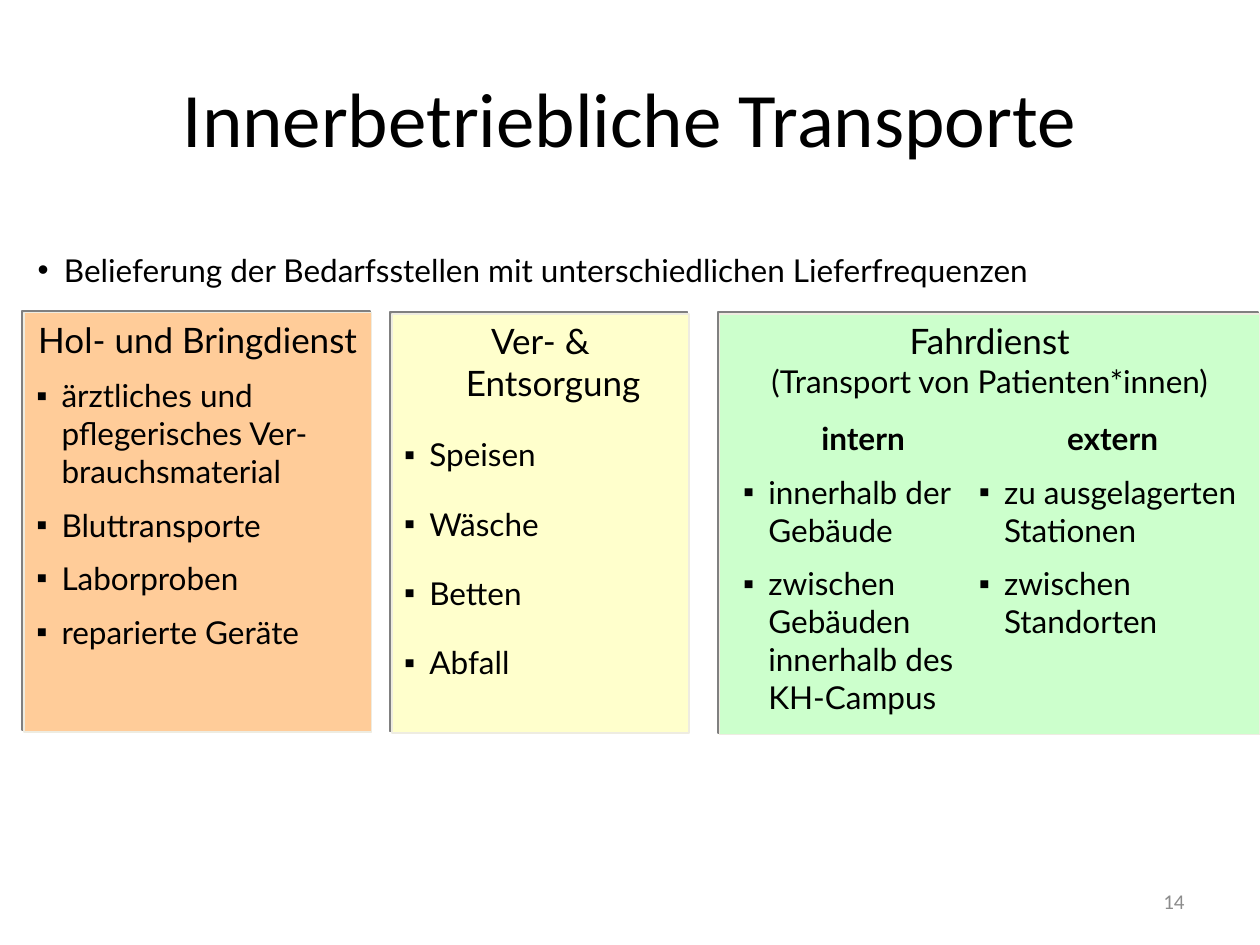
from lxml import etree
from pptx import Presentation
from pptx.dml.color import RGBColor
from pptx.enum.shapes import MSO_SHAPE
from pptx.enum.text import MSO_ANCHOR, PP_ALIGN
from pptx.oxml import parse_xml
from pptx.oxml.ns import qn
from pptx.util import Inches, Pt

SHADOW = (
    '<a:effectLst xmlns:a="http://schemas.openxmlformats.org/drawingml/2006/main">'
    '<a:outerShdw dist="17780" dir="13500000" algn="ctr" rotWithShape="0">'
    '<a:srgbClr val="808080"/></a:outerShdw></a:effectLst>'
)


def color(hex_code):
    return RGBColor.from_string(hex_code)


def write(p, text, size, align=PP_ALIGN.LEFT, indent=0, before=0, bullet=None,
          bold=False, font="Lato", ink="000000"):
    p.text = text
    p.alignment = align
    p.space_before = Pt(before)
    for r in p.runs:
        r.font.size = Pt(size)
        r.font.bold = bold
        r.font.name = font
        r.font.color.rgb = color(ink)
    pPr = p._p.get_or_add_pPr()
    pPr.set("marL", str(Inches(indent)))
    pPr.set("indent", str(-Inches(indent)))
    if bullet:
        etree.SubElement(pPr, qn("a:buFont")).set("typeface", "Arial")
        etree.SubElement(pPr, qn("a:buChar")).set("char", bullet)


prs = Presentation()
prs.slide_width, prs.slide_height = Inches(10), Inches(7.5)
s = prs.slides.add_slide(prs.slide_layouts[5])

# Title
title = s.shapes.title
title.left, title.top = Inches(0.5), Inches(0.3)
title.width, title.height = Inches(9), Inches(1.25)
title.text_frame.vertical_anchor = MSO_ANCHOR.MIDDLE
write(title.text_frame.paragraphs[0], "Innerbetriebliche Transporte", 44,
      PP_ALIGN.CENTER, font="Calibri")

# Introductory line
sp = s.shapes.add_textbox(Inches(0.2), Inches(1.94), Inches(10.53), Inches(0.4))
sp.text_frame.word_wrap = True
write(sp.text_frame.paragraphs[0],
      "Belieferung der Bedarfsstellen mit unterschiedlichen Lieferfrequenzen",
      18, indent=0.21, bullet="•")

# Panels: position, fill, framed, heading, heading indent, item gap, items
panels = [
    ((0.19, 2.48, 2.76, 3.33), "FFCC99", True, "Hol- und Bringdienst", 0.2, 9,
     ["ärztliches und \npflegerisches Ver-brauchsmaterial", "Bluttransporte",
      "Laborproben", "reparierte Geräte"]),
    ((3.11, 2.49, 2.36, 3.33), "FFFFCC", True, "Ver- & Entsorgung", 0.2, 18,
     ["Speisen", "Wäsche", "Betten", "Abfall"]),
    ((5.71, 2.49, 4.29, 3.34), "CCFFCC", True, "Fahrdienst", 0, 0, []),
    ((5.8, 3.28, 2.1, 2.51), "CCFFCC", False, "intern", 0.2, 9,
     ["innerhalb der Gebäude", "zwischen\nGebäuden\ninnerhalb des KH-Campus"]),
    ((7.67, 3.28, 2.32, 2.2), "CCFFCC", False, "extern", 0.2, 9,
     ["zu ausgelagerten\nStationen", "zwischen Standorten"]),
]
for box, fill, framed, heading, indent, gap, items in panels:
    sp = s.shapes.add_shape(MSO_SHAPE.RECTANGLE, *[Inches(v) for v in box])
    sp.fill.solid()
    sp.fill.fore_color.rgb = color(fill)
    if framed:
        sp.line.color.rgb = color("EEECE1")
        sp.line.width = Pt(1)
        sp._element.spPr.append(parse_xml(SHADOW))
    else:
        sp.line.fill.background()
        sp.shadow.inherit = False
    tf = sp.text_frame
    tf.word_wrap = True
    tf.vertical_anchor = MSO_ANCHOR.TOP
    write(tf.paragraphs[0], heading, 20 if framed else 18, PP_ALIGN.CENTER,
          indent, bold=not framed)
    for item in items:
        write(tf.add_paragraph(), item, 18, indent=0.2, before=gap, bullet="▪")
    if heading == "Fahrdienst":
        write(tf.add_paragraph(), "(Transport von Patienten*innen)", 18,
              PP_ALIGN.CENTER)

# Slide number
sp = s.shapes.add_textbox(Inches(7.17), Inches(6.95), Inches(2.33), Inches(0.4))
sp.text_frame.word_wrap = True
sp.text_frame.vertical_anchor = MSO_ANCHOR.MIDDLE
write(sp.text_frame.paragraphs[0], "14", 12, PP_ALIGN.RIGHT,
      font="Calibri", ink="8C8C8C")

prs.save("out.pptx")
